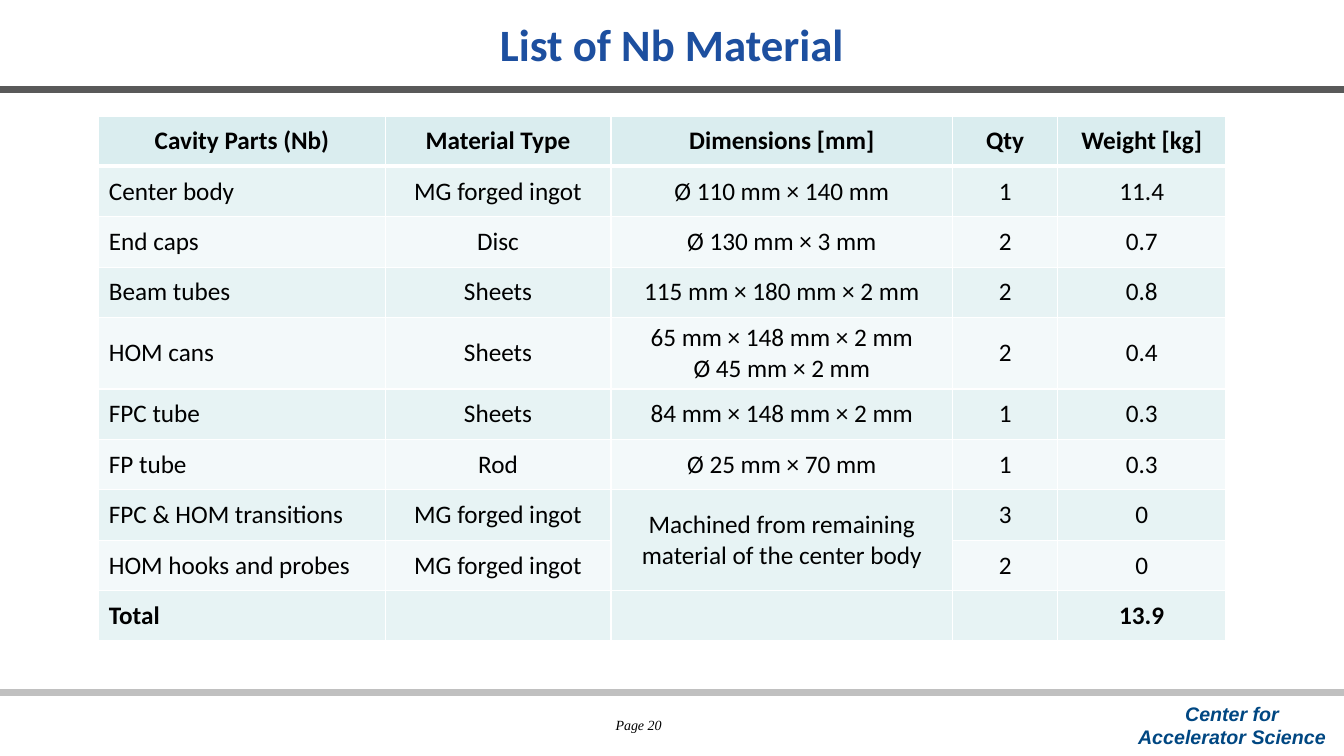
"""Build a slide that lists the niobium material of a cavity."""
from dataclasses import dataclass

import lxml.etree
import pptx
import pptx.dml.color
import pptx.enum.text
import pptx.oxml.ns
import pptx.util

Inches = pptx.util.Inches
RGBColor = pptx.dml.color.RGBColor
ALIGN = pptx.enum.text.PP_ALIGN
MIDDLE = pptx.enum.text.MSO_ANCHOR.MIDDLE
TOP = pptx.enum.text.MSO_ANCHOR.TOP

BLACK = RGBColor(0, 0, 0)
WHITE = RGBColor(0xFF, 0xFF, 0xFF)
BLUE = RGBColor(0x1D, 0x4F, 0x9F)
NAVY = RGBColor(0x00, 0x47, 0x82)
DARK = RGBColor(0x59, 0x59, 0x59)
SILVER = RGBColor(0xC0, 0xC0, 0xC0)
HEAD = RGBColor(0xDA, 0xED, 0xEF)
BANDS = (RGBColor(0xF3, 0xF9, 0xFA), RGBColor(0xE7, 0xF3, 0xF4))

WIDTH = 13.33
COLS = (2.84, 2.24, 3.39, 1.04, 1.67)
ROW = 0.5
TALL = 0.71
PARTS = (
    ("Cavity Parts (Nb)", "Material Type", "Dimensions [mm]", "Qty", "Weight [kg]"),
    ("Center body", "MG forged ingot", "Ø 110 mm × 140 mm", "1", "11.4"),
    ("End caps", "Disc", "Ø 130 mm × 3 mm", "2", "0.7"),
    ("Beam tubes", "Sheets", "115 mm × 180 mm × 2 mm", "2", "0.8"),
    ("HOM cans", "Sheets", "65 mm × 148 mm × 2 mm\nØ 45 mm × 2 mm", "2", "0.4"),
    ("FPC tube", "Sheets", "84 mm × 148 mm × 2 mm", "1", "0.3"),
    ("FP tube", "Rod", "Ø 25 mm × 70 mm", "1", "0.3"),
    ("FPC & HOM transitions", "MG forged ingot",
     "Machined from remaining material of the center body", "3", "0"),
    ("HOM hooks and probes", "MG forged ingot", "", "2", "0"),
    ("Total", "", "", "", "13.9"),
)


@dataclass
class Rule:
    y: float
    color: RGBColor


@dataclass
class Label:
    text: str
    box: tuple[float, float, float, float]
    style: dict
    anchor: pptx.enum.text.MSO_ANCHOR = TOP


RULES = (Rule(0.89, DARK), Rule(6.87, SILVER))
LABELS = (
    Label("Center for Accelerator Science", (11.1, 6.91, 2.24, 0.57),
          dict(size=14, font="Arial", color=NAVY, bold=True, italic=True)),
    Label("Page 20", (5.85, 7.06, 0.81, 0.27),
          dict(size=10, font="Times New Roman", italic=True, align=ALIGN.RIGHT)),
    Label("List of Nb Material", (0, 0, WIDTH, 0.87),
          dict(size=32, color=BLUE, bold=True), MIDDLE),
)


def write(frame, text: str, *, size: float = 18, font: str = "Calibri",
          color: RGBColor = BLACK, bold: bool = False, italic: bool = False,
          align=ALIGN.CENTER) -> None:
    frame.word_wrap = True
    frame.text = text
    for para in frame.paragraphs:
        para.alignment = align
        face = para.font
        face.size, face.name = pptx.util.Pt(size), font
        face.bold, face.italic = bold, italic
        face.color.rgb = color


def draw_rule(slide, rule: Rule) -> None:
    y = Inches(rule.y)
    line = slide.shapes.add_connector(
        pptx.enum.shapes.MSO_CONNECTOR.STRAIGHT, 0, y, Inches(WIDTH), y)
    line.line.color.rgb = rule.color
    line.line.width = pptx.util.Pt(5)
    lxml.etree.SubElement(line._element.spPr, pptx.oxml.ns.qn("a:effectLst"))


def draw_label(slide, label: Label) -> None:
    frame = slide.shapes.add_textbox(*map(Inches, label.box)).text_frame
    frame.vertical_anchor = label.anchor
    write(frame, label.text, **label.style)


def edge(cell, row: int) -> None:
    qn = pptx.oxml.ns.qn
    props = cell._tc.get_or_add_tcPr()
    thick = {"T": 3 if row == 1 else 1, "B": 3 if row == 0 else 1}
    for spot, side in enumerate("LRTB"):
        width = pptx.util.Pt(thick.get(side, 1))
        line = lxml.etree.Element(qn(f"a:ln{side}"), w=str(int(width)))
        fill = lxml.etree.SubElement(line, qn("a:solidFill"))
        lxml.etree.SubElement(fill, qn("a:srgbClr"), val=str(WHITE))
        props.insert(spot, line)


def draw_table(slide) -> None:
    high = ROW * (len(PARTS) - 1) + TALL
    table = slide.shapes.add_table(
        len(PARTS), len(COLS), Inches(0.98), Inches(1.15),
        Inches(sum(COLS)), Inches(high)).table
    table.first_row = table.horz_banding = False
    for col, wide in zip(table.columns, COLS):
        col.width = Inches(wide)
    for r, texts in enumerate(PARTS):
        table.rows[r].height = Inches(TALL if "\n" in "".join(texts) else ROW)
        for c, text in enumerate(texts):
            cell = table.cell(r, c)
            cell.vertical_anchor = MIDDLE
            cell.fill.solid()
            cell.fill.fore_color.rgb = BANDS[r % 2] if r else HEAD
            edge(cell, r)
            if text:
                write(cell.text_frame, text, bold=r in (0, len(PARTS) - 1),
                      align=ALIGN.LEFT if r and c == 0 else ALIGN.CENTER)
    table.cell(7, 2).merge(table.cell(8, 2))


def main() -> None:
    deck = pptx.Presentation()
    deck.slide_width, deck.slide_height = Inches(WIDTH), Inches(7.5)
    slide = deck.slides.add_slide(deck.slide_layouts[6])
    for rule in RULES:
        draw_rule(slide, rule)
    for label in LABELS:
        draw_label(slide, label)
    draw_table(slide)
    deck.save("out.pptx")


if __name__ == "__main__":
    main()
